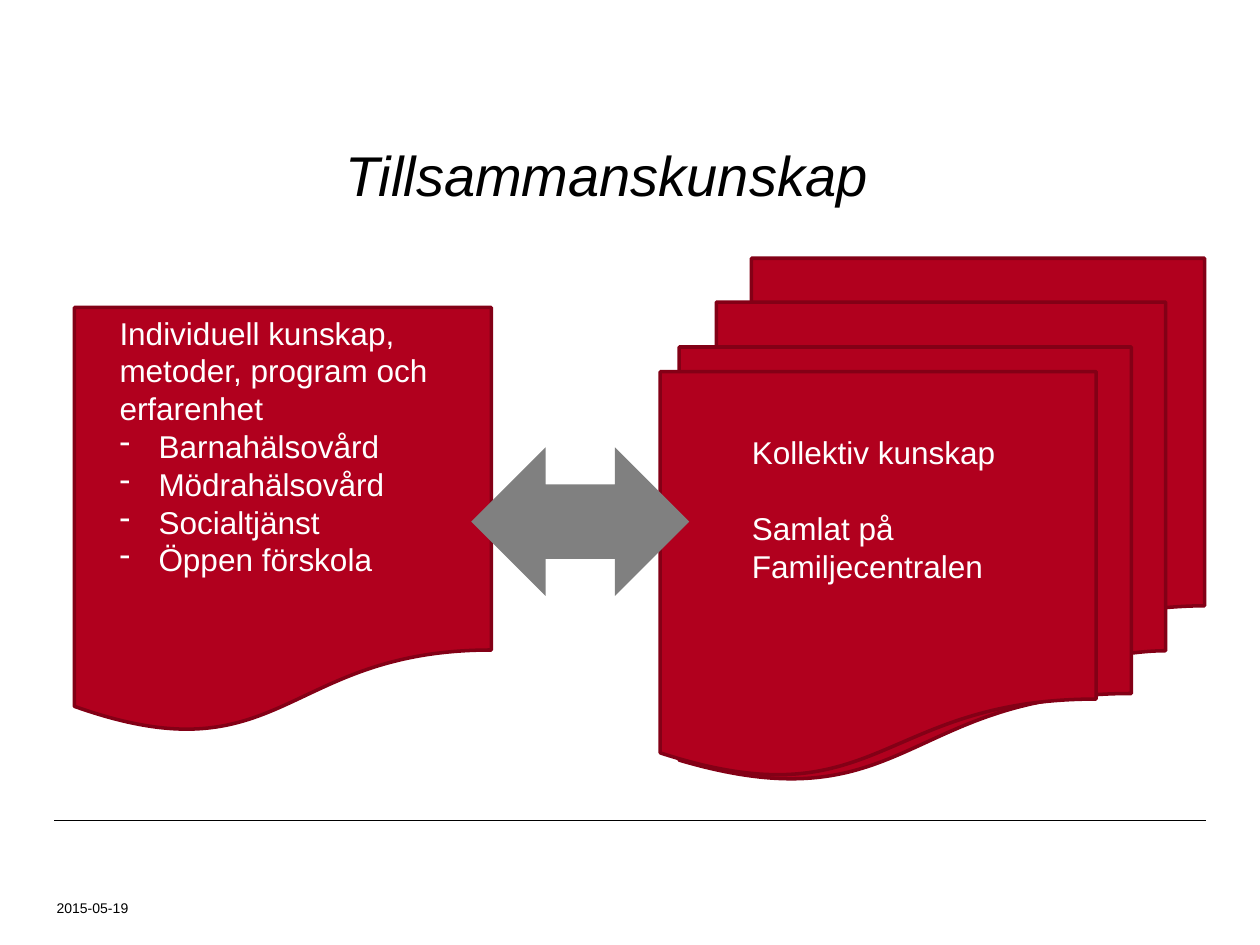
from dataclasses import dataclass
from typing import Optional

import pptx
import pptx.dml.color
import pptx.enum.shapes
import pptx.oxml.ns
import pptx.util
from lxml import etree

Inches = pptx.util.Inches
Pt = pptx.util.Pt
SHAPES = pptx.enum.shapes.MSO_SHAPE
qn = pptx.oxml.ns.qn


@dataclass(frozen=True)
class Theme:
    font: str = "Arial"
    black: str = "000000"
    white: str = "FFFFFF"
    red: str = "B1001E"
    dark_red: str = "830016"
    grey: str = "808080"
    title_size: float = 32
    body_size: float = 18
    date_size: float = 8
    body_leading: float = 21.6
    border: float = 2
    rule: float = 0.5
    bullet_indent: float = 0.31


@dataclass(frozen=True)
class Box:
    left: float
    top: float
    width: float
    height: float

    def lengths(self) -> tuple:
        return tuple(Inches(v) for v in (self.left, self.top, self.width, self.height))


@dataclass(frozen=True)
class Line:
    text: str
    bullet: bool = False
    space_before: float = 0


THEME = Theme()


def rgb(value: str) -> pptx.dml.color.RGBColor:
    return pptx.dml.color.RGBColor.from_string(value)


def add_figure(slide, kind, box: Box, fill: str, border: Optional[str] = None) -> None:
    figure = slide.shapes.add_shape(kind, *box.lengths())
    figure.shadow.inherit = False
    figure.fill.solid()
    figure.fill.fore_color.rgb = rgb(fill)
    if border:
        figure.line.color.rgb = rgb(border)
        figure.line.width = Pt(THEME.border)
    else:
        figure.line.fill.background()


def add_dash(paragraph) -> None:
    properties = paragraph._p.get_or_add_pPr()
    indent = Inches(THEME.bullet_indent)
    properties.set("marL", str(indent))
    properties.set("indent", str(-indent))
    etree.SubElement(properties, qn("a:buChar")).set("char", "-")


def add_text(slide, box: Box, lines: list[Line], size: float, color: str,
             italic: bool = False, leading: Optional[float] = None) -> None:
    frame = slide.shapes.add_textbox(*box.lengths()).text_frame
    frame.word_wrap = True
    for index, line in enumerate(lines):
        paragraph = frame.add_paragraph() if index else frame.paragraphs[0]
        paragraph.text = line.text
        if line.bullet:
            add_dash(paragraph)
        if leading:
            paragraph.line_spacing = Pt(leading)
        if line.space_before:
            paragraph.space_before = Pt(line.space_before)
        font = paragraph.font
        font.name, font.size, font.italic = THEME.font, Pt(size), italic
        font.color.rgb = rgb(color)


def add_rule(slide, left: float, right: float, y: float) -> None:
    rule = slide.shapes.add_connector(
        pptx.enum.shapes.MSO_CONNECTOR.STRAIGHT,
        Inches(left), Inches(y), Inches(right), Inches(y))
    rule.line.color.rgb = rgb(THEME.black)
    rule.line.width = Pt(THEME.rule)
    etree.SubElement(rule._element.spPr, qn("a:effectLst"))


def main() -> None:
    presentation = pptx.Presentation()
    presentation.slide_width, presentation.slide_height = Inches(10), Inches(7.5)
    slide = presentation.slides.add_slide(presentation.slide_layouts[6])

    # Footer
    add_rule(slide, 0.43, 9.57, 6.51)
    add_text(slide, Box(0.35, 7.09, 0.79, 0.24), [Line("2015-05-19")],
             THEME.date_size, THEME.black)

    # Individual knowledge, and the stack behind the collective knowledge
    add_figure(slide, SHAPES.FLOWCHART_DOCUMENT, Box(0.59, 2.44, 3.31, 3.39),
               THEME.red, THEME.dark_red)
    add_figure(slide, SHAPES.FLOWCHART_MULTIDOCUMENT, Box(5.39, 2.05, 4.17, 4.14),
               THEME.red, THEME.dark_red)
    services = ["Barnahälsovård", "Mödrahälsovård", "Socialtjänst", "Öppen förskola"]
    individual = [Line("Individuell kunskap, metoder, program och erfarenhet")]
    individual += [Line(service, bullet=True) for service in services]
    add_text(slide, Box(0.85, 2.44, 2.89, 2.22), individual,
             THEME.body_size, THEME.white, leading=THEME.body_leading)

    # Collective knowledge, with the arrow between the two sides
    add_figure(slide, SHAPES.FLOWCHART_DOCUMENT, Box(5.24, 2.95, 3.46, 3.24),
               THEME.red, THEME.dark_red)
    add_figure(slide, SHAPES.LEFT_RIGHT_ARROW, Box(3.74, 3.55, 1.73, 1.18), THEME.grey)
    collective = [Line("Kollektiv kunskap"),
                  Line("Samlat på Familjecentralen", space_before=THEME.body_leading)]
    add_text(slide, Box(5.87, 3.39, 2.44, 1.62), collective,
             THEME.body_size, THEME.white, leading=THEME.body_leading)

    # Title
    add_text(slide, Box(2.64, 1.07, 4.8, 0.64), [Line("Tillsammanskunskap")],
             THEME.title_size, THEME.black, italic=True)

    presentation.save("out.pptx")


if __name__ == "__main__":
    main()
